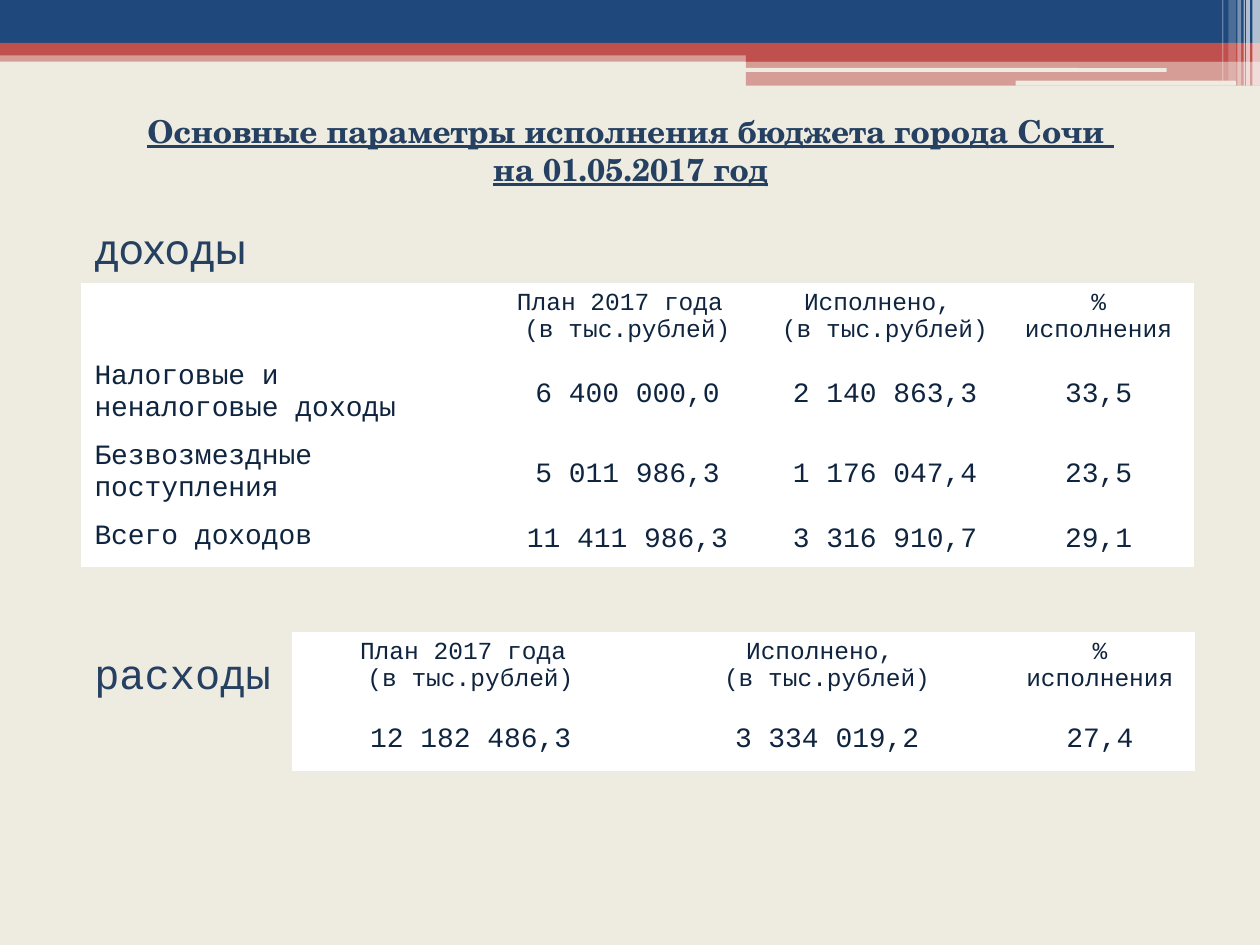
from pptx import Presentation
from pptx.dml.color import RGBColor
from pptx.enum.shapes import MSO_SHAPE as Shape
from pptx.enum.text import MSO_ANCHOR as Anchor, PP_ALIGN as Align
from pptx.oxml.ns import qn
from pptx.util import Inches, Pt
from lxml.etree import SubElement, Element

COLORS = {
    "paper": "EEECE1", "blue": "1F497D", "red": "C0504D", "white": "FFFFFF",
    "heading": "254061", "ink": "0F243E",
}
MONO, SANS, SERIF = "Courier New", "Karla", "TeX Gyre Schola"

# Content
TITLE = ["Основные параметры исполнения бюджета города Сочи ", "на 01.05.2017 год"]
HEADERS = [
    ["План 2017 года ", "(в тыс.рублей)"],
    ["Исполнено, ", "(в тыс.рублей)"],
    ["% исполнения"],
]
INCOME = [
    ["Налоговые и неналоговые доходы", "6 400 000,0", "2 140 863,3", "33,5"],
    ["Безвозмездные поступления", "5 011 986,3", "1 176 047,4", "23,5"],
    ["Всего доходов", "11 411 986,3", "3 316 910,7", "29,1"],
]
EXPENSES = [["12 182 486,3", "3 334 019,2", "27,4"]]
LABELS = [("доходы", 1.72, SANS), ("расходы", 5.09, MONO)]

# Header decoration: left, top, width, height, colour, opacity %
BANDS = [
    (0, 0.4, 10, 0.09, "red", 50),
    (0, 0, 10, 0.34, "blue", 100),
    (0, 0.34, 10, 0.1, "red", 100),
    (5.92, 0.39, 4.08, 0.1, "red", 100),
    (5.92, 0.48, 4.08, 0.2, "red", 50),
]
SLITS = [(5.91, 0.54, 3.35, 0.03, "paper", 100), (8.06, 0.64, 1.75, 0.04, "paper", 100)]
STRIPES = [
    (left, 0, width, height, "white", opacity)
    for left, width, height, opacity in [
        (9.94, 0.06, 0.68, 65), (9.89, 0.03, 0.68, 65), (9.87, 0.01, 0.68, 60),
        (9.82, 0.03, 0.68, 40), (9.75, 0.06, 0.64, 20), (9.7, 0.01, 0.64, 30),
    ]
]


def rgb(name):
    return RGBColor.from_string(COLORS[name])


def write(frame, lines, font=MONO, size=16, color="ink", align=Align.LEFT,
          bold=False, underline=False):
    for index, line in enumerate(lines):
        paragraph = frame.paragraphs[0] if index == 0 else frame.add_paragraph()
        paragraph.alignment = align
        run = paragraph.add_run()
        run.text = line
        run.font.name, run.font.size = font, Pt(size)
        run.font.bold, run.font.underline = bold, underline
        run.font.color.rgb = rgb(color)


def add_block(slide, kind, left, top, width, height, color, opacity):
    shape = slide.shapes.add_shape(
        kind, Inches(left), Inches(top), Inches(width), Inches(height))
    shape.shadow.inherit = False
    shape.line.fill.background()
    shape.fill.solid()
    shape.fill.fore_color.rgb = rgb(color)
    if opacity < 100:
        fill_color = shape.fill._xPr.find(qn("a:solidFill"))[0]
        SubElement(fill_color, qn("a:alpha"), val=str(opacity * 1000))


def set_borders(cell, bottom):
    properties = cell._tc.get_or_add_tcPr()
    widths = [("a:lnL", 1), ("a:lnR", 1), ("a:lnT", 1), ("a:lnB", bottom)]
    for index, (tag, width) in enumerate(widths):
        line = Element(qn(tag), w=str(Pt(width)))
        fill = SubElement(line, qn("a:solidFill"))
        SubElement(fill, qn("a:srgbClr"), val=COLORS["white"])
        properties.insert(index, line)


def add_budget_table(slide, left, top, height, columns, row_heights, headers, rows):
    frame = slide.shapes.add_table(
        len(rows) + 1, len(columns), Inches(left), Inches(top),
        Inches(sum(columns)), Inches(height))
    table = frame.table
    for column, width in zip(table.columns, columns):
        column.width = Inches(width)
    for row, row_height in zip(table.rows, row_heights):
        row.height = Inches(row_height)
    frame.height = Inches(height)
    grid = [headers] + [[[text] for text in row] for row in rows]
    for r, row in enumerate(grid):
        for c, lines in enumerate(row):
            cell = table.cell(r, c)
            cell.fill.solid()
            cell.fill.fore_color.rgb = rgb("white")
            set_borders(cell, bottom=3 if r == 0 else 1)
            is_label = len(columns) > len(HEADERS) and c == 0
            if r and not is_label:
                cell.vertical_anchor = Anchor.MIDDLE
            write(cell.text_frame, lines, size=16 if r else 14,
                  align=Align.LEFT if is_label else Align.CENTER)


def main():
    presentation = Presentation()
    presentation.slide_width, presentation.slide_height = Inches(10), Inches(7.5)
    slide = presentation.slides.add_slide(presentation.slide_layouts[5])
    slide.background.fill.solid()
    slide.background.fill.fore_color.rgb = rgb("paper")

    # Header decoration
    for kind, blocks in [(Shape.RECTANGLE, BANDS), (Shape.ROUNDED_RECTANGLE, SLITS),
                         (Shape.RECTANGLE, STRIPES)]:
        for block in blocks:
            add_block(slide, kind, *block)

    # Title
    title = slide.shapes.title
    title.left, title.top = Inches(0.24), Inches(0.84)
    title.width, title.height = Inches(9.53), Inches(0.71)
    title.text_frame.vertical_anchor = Anchor.TOP
    write(title.text_frame, TITLE, font=SERIF, size=18, color="heading",
          align=Align.CENTER, bold=True, underline=True)

    # Section labels
    for text, top, font in LABELS:
        box = slide.shapes.add_textbox(Inches(0.65), Inches(top), Inches(2.2), Inches(0.5))
        box.text_frame.word_wrap = True
        write(box.text_frame, [text], font=font, size=24, color="heading")

    # Budget tables
    add_budget_table(slide, 0.65, 2.25, 2.01, [3.23, 2.2, 1.89, 1.5], [0.41] * 4,
                     [[]] + HEADERS, INCOME)
    add_budget_table(slide, 2.32, 5.02, 1.09, [2.83, 2.83, 1.5], [0.62, 0.47],
                     HEADERS, EXPENSES)

    presentation.save("out.pptx")


if __name__ == "__main__":
    main()
